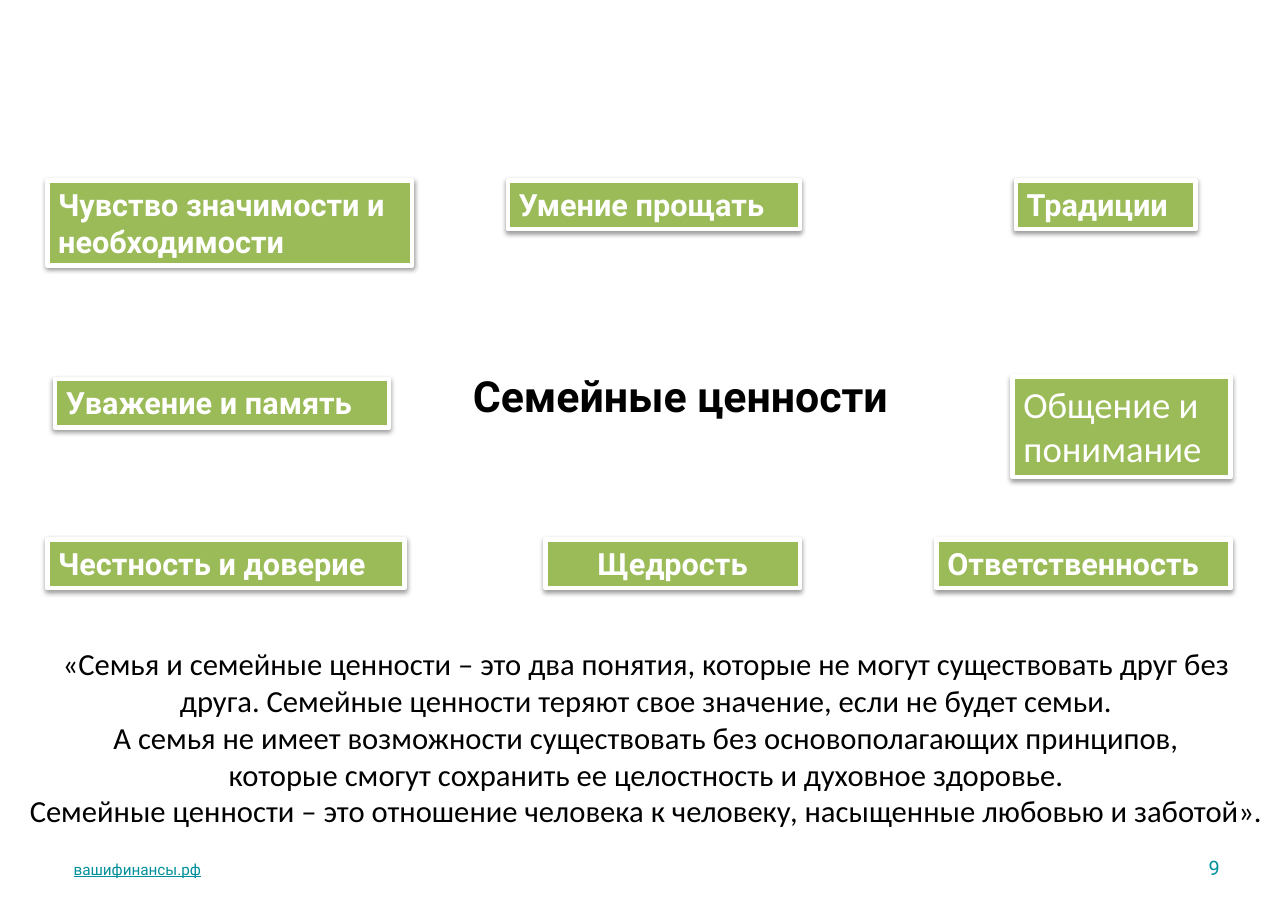
from dataclasses import dataclass

from lxml.etree import SubElement
from pptx import Presentation
from pptx.dml.color import RGBColor
from pptx.enum.shapes import MSO_SHAPE
from pptx.enum.text import MSO_ANCHOR, PP_ALIGN
from pptx.oxml.ns import qn
from pptx.shapes.autoshape import Shape
from pptx.slide import Slide
from pptx.util import Emu, Pt

EMU_PER_PX = 9144  # 100 px to the inch
WHITE, BLACK, GREEN, TEAL = "FFFFFF", "000000", "9BBB59", "00909B"
TOP_ROW, BOTTOM_ROW, ROW_HEIGHT = 164, 490, 44


@dataclass(frozen=True)
class TextStyle:
    size: int
    color: str
    font: str = "Roboto"
    bold: bool = False
    underline: bool = False
    align: PP_ALIGN = PP_ALIGN.LEFT
    anchor: MSO_ANCHOR = MSO_ANCHOR.TOP


@dataclass(frozen=True)
class Block:
    left: int
    top: int
    width: int
    height: int
    lines: tuple[str, ...]
    style: TextStyle


VALUE = TextStyle(20, WHITE, bold=True)
CENTERED_VALUE = TextStyle(20, WHITE, bold=True, align=PP_ALIGN.CENTER)
LARGE_VALUE = TextStyle(24, WHITE, "Calibri")
HEADING = TextStyle(28, BLACK, bold=True, align=PP_ALIGN.CENTER)
QUOTE = TextStyle(20, BLACK, "Calibri", align=PP_ALIGN.CENTER)
SITE = TextStyle(10, TEAL, underline=True, anchor=MSO_ANCHOR.MIDDLE)
PAGE_NUMBER = TextStyle(13, TEAL, align=PP_ALIGN.RIGHT, anchor=MSO_ANCHOR.MIDDLE)

FAMILY_VALUES = (
    Block(43, TOP_ROW, 331, 77, ("Чувство значимости и необходимости",), VALUE),
    Block(461, TOP_ROW, 265, ROW_HEIGHT, ("Умение прощать",), VALUE),
    Block(922, TOP_ROW, 163, ROW_HEIGHT, ("Традиции",), VALUE),
    Block(50, 344, 303, ROW_HEIGHT, ("Уважение и память",), VALUE),
    Block(919, 342, 198, 91, ("Общение и", "понимание"), LARGE_VALUE),
    Block(43, BOTTOM_ROW, 324, ROW_HEIGHT, ("Честность и доверие",), VALUE),
    Block(495, BOTTOM_ROW, 231, ROW_HEIGHT, ("Щедрость",), CENTERED_VALUE),
    Block(850, BOTTOM_ROW, 267, ROW_HEIGHT, ("Ответственность",), VALUE),
)

PLAIN_TEXTS = (
    Block(401, 331, 433, 57, ("Семейные ценности",), HEADING),
    Block(4, 581, 1165, 246, (
        "«Семья и семейные ценности – это два понятия, которые не могут существовать друг без",
        "друга. Семейные ценности теряют свое значение, если не будет семьи.",
        "А семья не имеет возможности существовать без основополагающих принципов,",
        "которые смогут сохранить ее целостность и духовное здоровье.",
        "Семейные ценности – это отношение человека к человеку, насыщенные любовью и заботой».",
    ), QUOTE),
    Block(57, 767, 397, 44, ("вашифинансы.рф",), SITE),
    Block(1030, 766, 87, 44, ("9",), PAGE_NUMBER),
)


def px(length: int) -> Emu:
    return Emu(length * EMU_PER_PX)


def rgb(color: str) -> RGBColor:
    return RGBColor.from_string(color)


def frame(block: Block) -> tuple[Emu, Emu, Emu, Emu]:
    return px(block.left), px(block.top), px(block.width), px(block.height)


def write_text(shape: Shape, block: Block) -> None:
    style = block.style
    text_frame = shape.text_frame
    text_frame.word_wrap = True
    text_frame.vertical_anchor = style.anchor
    for index, line in enumerate(block.lines):
        paragraph = text_frame.add_paragraph() if index else text_frame.paragraphs[0]
        paragraph.alignment = style.align
        run = paragraph.add_run()
        run.text = line
        run.font.name = style.font
        run.font.size = Pt(style.size)
        run.font.bold = style.bold
        run.font.underline = style.underline
        run.font.color.rgb = rgb(style.color)


def add_soft_shadow(shape: Shape) -> None:
    """Put a blurred black shadow just below the shape."""
    shape.shadow.inherit = False
    effects = shape.element.spPr.find(qn("a:effectLst"))
    shadow = SubElement(effects, qn("a:outerShdw"), blurRad="40000", dist="20000",
                        dir="5400000", rotWithShape="0")
    color = SubElement(shadow, qn("a:srgbClr"), val=BLACK)
    SubElement(color, qn("a:alpha"), val="38000")


def add_value_card(slide: Slide, block: Block) -> None:
    shape = slide.shapes.add_shape(MSO_SHAPE.RECTANGLE, *frame(block))
    shape.fill.solid()
    shape.fill.fore_color.rgb = rgb(GREEN)
    shape.line.color.rgb = rgb(WHITE)
    shape.line.width = Pt(3)
    add_soft_shadow(shape)
    write_text(shape, block)


def add_plain_text(slide: Slide, block: Block) -> None:
    write_text(slide.shapes.add_textbox(*frame(block)), block)


def main() -> None:
    presentation = Presentation()
    presentation.slide_width, presentation.slide_height = px(1169), px(827)
    slide = presentation.slides.add_slide(presentation.slide_layouts[6])
    for block in FAMILY_VALUES:
        add_value_card(slide, block)
    for block in PLAIN_TEXTS:
        add_plain_text(slide, block)
    presentation.save("out.pptx")


if __name__ == "__main__":
    main()
